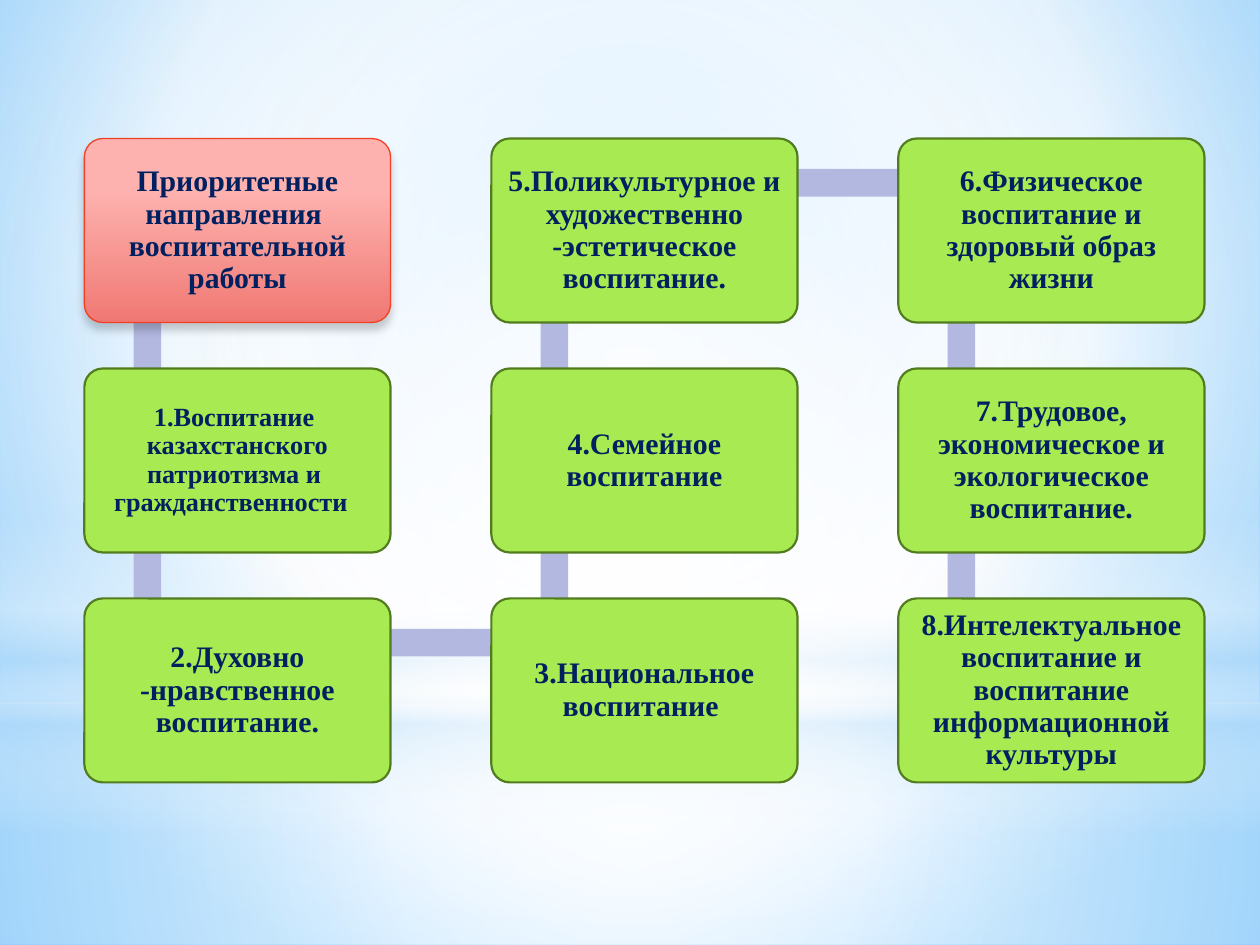
from lxml.etree import SubElement
from pptx import Presentation
from pptx.dml.color import RGBColor
from pptx.enum.shapes import MSO_SHAPE
from pptx.enum.text import MSO_ANCHOR, PP_ALIGN
from pptx.oxml.ns import qn
from pptx.util import Inches, Pt

NAVY = RGBColor(0x00, 0x20, 0x60)
LIME = RGBColor(0xA7, 0xEA, 0x52)
GREEN = RGBColor(0x53, 0x7C, 0x1F)
RED = RGBColor(0xF1, 0x41, 0x24)
PINK = RGBColor(0xFD, 0xB2, 0xAF)
CORAL = RGBColor(0xF0, 0x78, 0x73)
LILAC = RGBColor(0xB2, 0xB8, 0xE0)
WHITE = RGBColor(0xFF, 0xFF, 0xFF)
BLACK = RGBColor(0x00, 0x00, 0x00)
PALE = RGBColor(0xB4, 0xDC, 0xFA)
SKY = RGBColor(0x9E, 0xD5, 0xFF)
BLUE = RGBColor(0x5B, 0xB9, 0xFF)

MID = (50, 50, 50, 50)
# Grid of boxes: first corner, box size, pitch
LEFT, TOP = 0.67, 1.1
WIDE, HIGH = 2.43, 1.46
STEP_X, STEP_Y = 3.23, 1.825
BAR = 0.22


def add_color(node, color, alpha=100):
    item = SubElement(node, qn("a:srgbClr"), val=str(color))
    if alpha < 100:
        SubElement(item, qn("a:alpha"), val=str(alpha * 1000))


def set_grad(node, stops, focus=None):
    """Swap the solid fill in node for a gradient: round with a focus, else downward."""
    solid = node.find(qn("a:solidFill"))
    grad = SubElement(node, qn("a:gradFill"), rotWithShape="1")
    node.replace(solid, grad)
    group = SubElement(grad, qn("a:gsLst"))
    for pos, color, alpha in stops:
        add_color(SubElement(group, qn("a:gs"), pos=str(pos * 1000)), color, alpha)
    if focus:
        shade = SubElement(grad, qn("a:path"), {"path": "circle"})
        sides = {k: str(v * 1000) for k, v in zip("ltrb", focus)}
        SubElement(shade, qn("a:fillToRect"), sides)
    else:
        SubElement(grad, qn("a:lin"), ang="5400000", scaled="0")


class Deck:
    font = "Times New Roman"

    def __init__(self):
        self.file = Presentation()
        self.file.slide_width, self.file.slide_height = Inches(10), Inches(7.5)
        self.slide = self.file.slides.add_slide(self.file.slide_layouts[6])

    def back(self, stops, focus):
        self.slide.background.fill.solid()
        set_grad(self.slide.element.find(".//" + qn("p:bgPr")), stops, focus)

    def shape(self, kind, x, y, w, h, color=WHITE):
        item = self.slide.shapes.add_shape(
            kind, Inches(x), Inches(y), Inches(w), Inches(h))
        item.shadow.inherit = False
        item.fill.solid()
        item.fill.fore_color.rgb = color
        item.line.fill.background()
        return item

    def glow(self, kind, y, h, stops, focus=None):
        item = self.shape(kind, 0, y, 10, h)
        set_grad(item.element.spPr, stops, focus)

    def bar(self, start, end):
        col, row = min(start, end)
        x, y = LEFT + col * STEP_X, TOP + row * STEP_Y
        if start[0] == end[0]:
            self.shape(MSO_SHAPE.RECTANGLE, x + 0.39, y + 0.36, BAR, 1.81, LILAC)
        else:
            self.shape(MSO_SHAPE.RECTANGLE, x + 0.5, y + 0.24, 3.22, BAR, LILAC)

    def box(self, spot, lines, size=17, edge=GREEN, width=1.25):
        col, row = spot
        item = self.shape(MSO_SHAPE.ROUNDED_RECTANGLE, LEFT + col * STEP_X,
                          TOP + row * STEP_Y, WIDE, HIGH, LIME)
        item.adjustments[0] = 0.1
        item.line.color.rgb = edge
        item.line.width = Pt(width)
        frame = item.text_frame
        frame.word_wrap = True
        frame.vertical_anchor = MSO_ANCHOR.MIDDLE
        pad = Inches(0.07 if size > 15 else 0.06)
        frame.margin_left = frame.margin_right = pad
        frame.margin_top = frame.margin_bottom = pad
        para = frame.paragraphs[0]
        para.alignment = PP_ALIGN.CENTER
        para.line_spacing = 0.9
        for i, line in enumerate(lines):
            if i:
                para.add_line_break()
            run = para.add_run()
            run.text = line
            run.font.name, run.font.size = self.font, Pt(size)
            run.font.bold = True
            run.font.color.rgb = NAVY
        return item

    def head(self, spot, lines):
        item = self.box(spot, lines, edge=RED, width=0.75)
        props = item.element.spPr
        set_grad(props, [(28, PINK, 100), (100, CORAL, 100)])
        shade = SubElement(props.find(qn("a:effectLst")), qn("a:outerShdw"),
                           blurRad=str(Pt(5)), dist=str(Pt(4)), dir="5400000",
                           rotWithShape="0")
        add_color(shade, BLACK, 20)


def main():
    deck = Deck()

    # Sky backdrop
    deck.back([(0, SKY, 100), (60, WHITE, 100), (100, BLUE, 100)], (20, 10, 20, 60))
    deck.glow(MSO_SHAPE.RECTANGLE, 5.58, 1.92,
              [(0, WHITE, 91), (37, WHITE, 76), (100, PALE, 79)], MID)
    deck.glow(MSO_SHAPE.RECTANGLE, 0, 5.58,
              [(0, WHITE, 89), (48, WHITE, 62), (100, PALE, 79)], MID)
    deck.glow(MSO_SHAPE.RECTANGLE, 4.12, 2.5,
              [(0, WHITE, 0), (29, WHITE, 30), (45, PALE, 40),
               (55, WHITE, 26), (65, PALE, 60), (100, WHITE, 0)])
    deck.glow(MSO_SHAPE.OVAL, 1.75, 5.58, [(0, WHITE, 100), (56, WHITE, 0)], MID)

    # Winding route: down, up, down
    route = [(0, 0), (0, 1), (0, 2), (1, 2), (1, 1), (1, 0), (2, 0), (2, 1), (2, 2)]
    for start, end in zip(route, route[1:]):
        deck.bar(start, end)

    # Heading box and the eight directions
    deck.head(route[0], ["Приоритетные направления ", "воспитательной работы"])
    texts = [
        "1.Воспитание  казахстанского патриотизма и  гражданственности  ",
        "2.Духовно -нравственное воспитание.",
        "3.Национальное воспитание ",
        "4.Семейное воспитание",
        "5.Поликультурное и художественно -эстетическое воспитание.",
        "6.Физическое воспитание и здоровый образ жизни",
        "7.Трудовое, экономическое и экологическое воспитание.",
        "8.Интелектуальное воспитание и воспитание информационной культуры",
    ]
    for i, (spot, text) in enumerate(zip(route[1:], texts)):
        deck.box(spot, [text], 17 if i else 15)

    deck.file.save("out.pptx")


if __name__ == "__main__":
    main()
